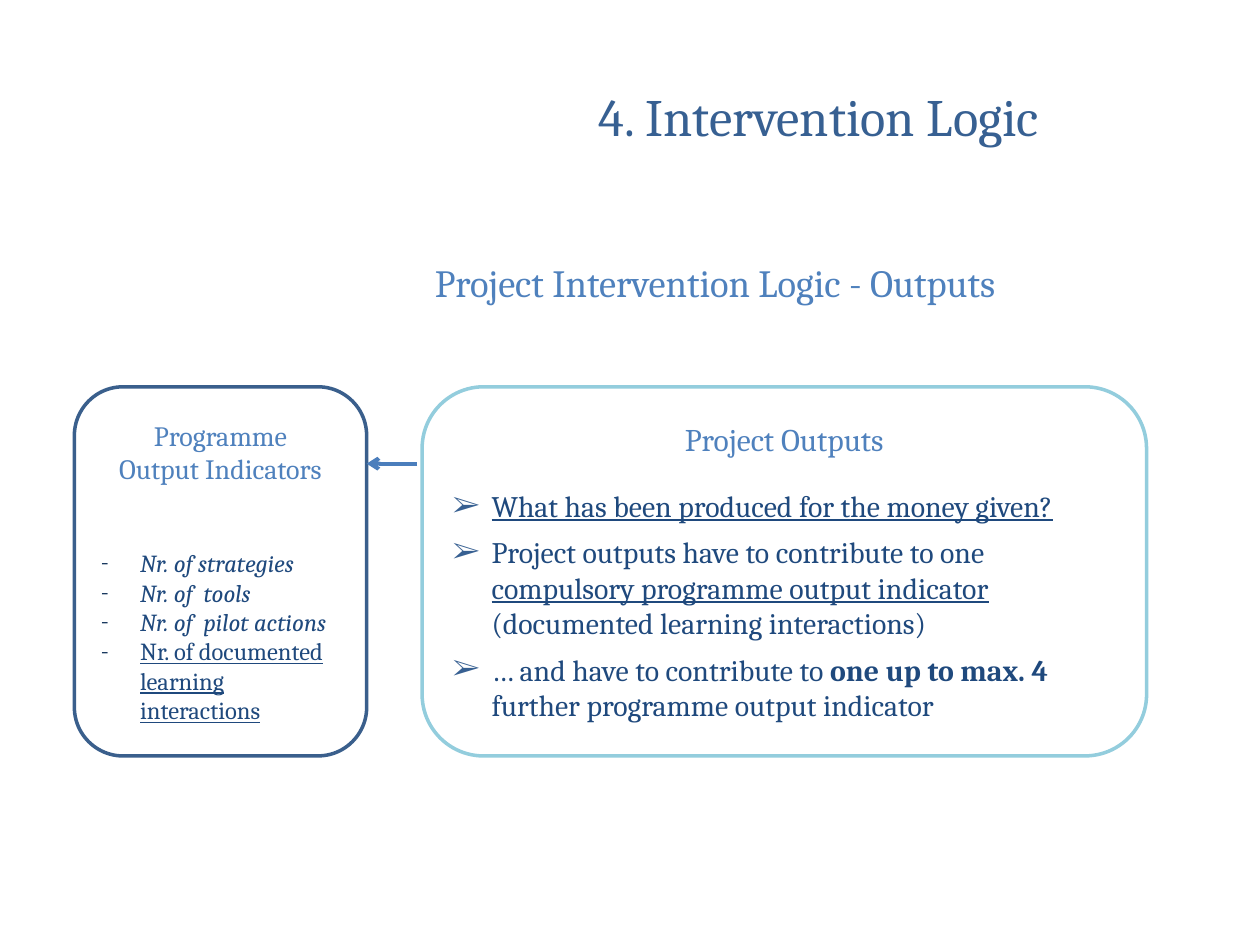
from dataclasses import dataclass

from lxml import etree
from pptx import Presentation
from pptx.dml.color import RGBColor
from pptx.enum.shapes import MSO_CONNECTOR, MSO_SHAPE
from pptx.enum.text import MSO_ANCHOR, MSO_AUTO_SIZE, PP_ALIGN
from pptx.oxml.ns import qn
from pptx.util import Inches, Pt

CENTER, LEFT = PP_ALIGN.CENTER, PP_ALIGN.LEFT
MIDDLE = MSO_ANCHOR.MIDDLE
NO_FIT, FIT_SHAPE = MSO_AUTO_SIZE.NONE, MSO_AUTO_SIZE.SHAPE_TO_FIT_TEXT
ROUNDED, STRAIGHT = MSO_SHAPE.ROUNDED_RECTANGLE, MSO_CONNECTOR.STRAIGHT
TITLE_ONLY = 5


@dataclass(frozen=True)
class Theme:
    font: str = "Cambria"
    title: str = "376092"
    heading: str = "4F81BD"
    body: str = "1F497D"
    arrow: str = "4B7EBC"
    card_fill: str = "FFFFFF"
    card_alpha: int = 63
    title_size: int = 30
    subtitle_size: int = 22


THEME = Theme()

# Each paragraph is a list of (text, style); style letters: b, i, u.
TITLE = [[("4. Intervention Logic", "")]]
SUBTITLE = [[("Project Intervention Logic - Outputs", "")]]

CARDS = [
    {
        "left": 0.59, "width": 2.32, "line": "3A5F8C",
        "heading": [[("Programme", "")], [("Output Indicators", "")]],
        "heading_size": 16,
        "items": [
            [("Nr. of strategies", "i")],
            [("Nr. of  tools", "i")],
            [("Nr. of  pilot actions", "i")],
            [("Nr. of documented learning interactions", "u")],
        ],
        "list": dict(size=14, bullet="-", bullet_color="17375E", gap=36),
    },
    {
        "left": 3.35, "width": 5.75, "line": "93CDDD",
        "heading": [[("Project Outputs", "")]],
        "heading_size": 18,
        "items": [
            [("What has been produced for the money given?", "u")],
            [("Project outputs have to contribute to one ", ""),
             ("compulsory programme output indicator ", "u"),
             ("(documented learning interactions)", "")],
            [("… and have to contribute to ", ""),
             ("one up to max. 4", "b"),
             (" further programme output indicator", "")],
        ],
        "list": dict(size=17, bullet="➢", bullet_color="376092", gap=17, after=6),
    },
]
CARD_TOP, CARD_HEIGHT = 3.07, 2.93
ARROW_Y, ARROW_GAP = 3.68, 0.04
BULLET_INDENT = 0.31


def rgb(color):
    return RGBColor.from_string(color)


def add_bullet(p, char, color):
    pPr = p._p.get_or_add_pPr()
    pPr.set("marL", str(Inches(BULLET_INDENT)))
    pPr.set("indent", str(-Inches(BULLET_INDENT)))
    bu_color = etree.SubElement(pPr, qn("a:buClr"))
    etree.SubElement(bu_color, qn("a:srgbClr"), val=color)
    etree.SubElement(pPr, qn("a:buFont"), typeface=THEME.font)
    etree.SubElement(pPr, qn("a:buChar"), char=char)


def write(tf, paragraphs, *, size, color, align=CENTER, bullet=None,
          bullet_color=None, gap=0, after=0):
    """Append paragraphs to a text frame; gap is the space above a later block."""
    tf.word_wrap = True
    for i, runs in enumerate(paragraphs):
        p = tf.add_paragraph() if tf.text else tf.paragraphs[0]
        if bullet:
            add_bullet(p, bullet, bullet_color)
        p.alignment = align
        p.space_before = Pt(gap if i == 0 else 0)
        p.space_after = Pt(after)
        for text, style in runs:
            r = p.add_run()
            r.text = text
            font = r.font
            font.name, font.size = THEME.font, Pt(size)
            font.color.rgb = rgb(color)
            font.bold, font.italic = "b" in style, "i" in style
            font.underline = "u" in style


def add_card(s, card):
    sp = s.shapes.add_shape(ROUNDED, Inches(card["left"]), Inches(CARD_TOP),
                            Inches(card["width"]), Inches(CARD_HEIGHT))
    sp.shadow.inherit = False
    sp.fill.solid()
    sp.fill.fore_color.rgb = rgb(THEME.card_fill)
    fill_color = sp._element.spPr.find(qn("a:solidFill")).find(qn("a:srgbClr"))
    etree.SubElement(fill_color, qn("a:alpha"), val=str(THEME.card_alpha * 1000))
    sp.line.color.rgb = rgb(card["line"])
    sp.line.width = Pt(2)
    tf = sp.text_frame
    tf.vertical_anchor = MIDDLE
    write(tf, card["heading"], size=card["heading_size"], color=THEME.heading)
    write(tf, card["items"], color=THEME.body, align=LEFT, **card["list"])


def add_arrow(s, start_x, end_x, y):
    line = s.shapes.add_connector(STRAIGHT, Inches(start_x), Inches(y),
                                  Inches(end_x), Inches(y))
    line.line.color.rgb = rgb(THEME.arrow)
    line.line.width = Pt(2.25)
    etree.SubElement(line.line._get_or_add_ln(), qn("a:tailEnd"), type="arrow")
    etree.SubElement(line._element.spPr, qn("a:effectLst"))


def main():
    prs = Presentation()
    prs.slide_width, prs.slide_height = Inches(10), Inches(7.5)
    s = prs.slides.add_slide(prs.slide_layouts[TITLE_ONLY])

    title = s.shapes.title
    title.left, title.top = Inches(3.76), Inches(0.6)
    title.width, title.height = Inches(5.48), Inches(0.63)
    title.text_frame.auto_size = NO_FIT
    write(title.text_frame, TITLE, size=THEME.title_size, color=THEME.title)

    subtitle = s.shapes.add_textbox(Inches(2.8), Inches(2.01),
                                    Inches(5.75), Inches(0.47))
    subtitle.text_frame.auto_size = FIT_SHAPE
    write(subtitle.text_frame, SUBTITLE, size=THEME.subtitle_size,
          color=THEME.heading)

    for card in CARDS:
        add_card(s, card)
    indicators, outputs = CARDS
    add_arrow(s, outputs["left"] - ARROW_GAP,
              indicators["left"] + indicators["width"], ARROW_Y)

    prs.save("out.pptx")


if __name__ == "__main__":
    main()
